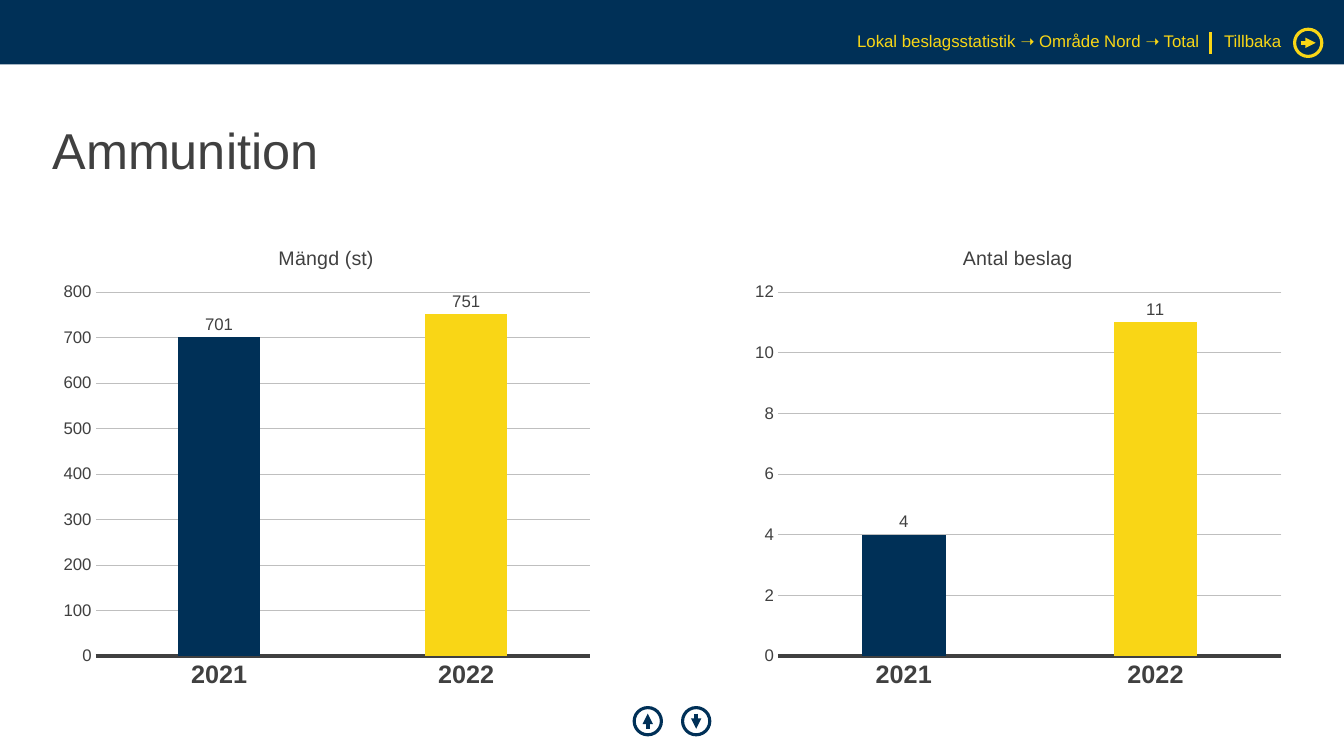
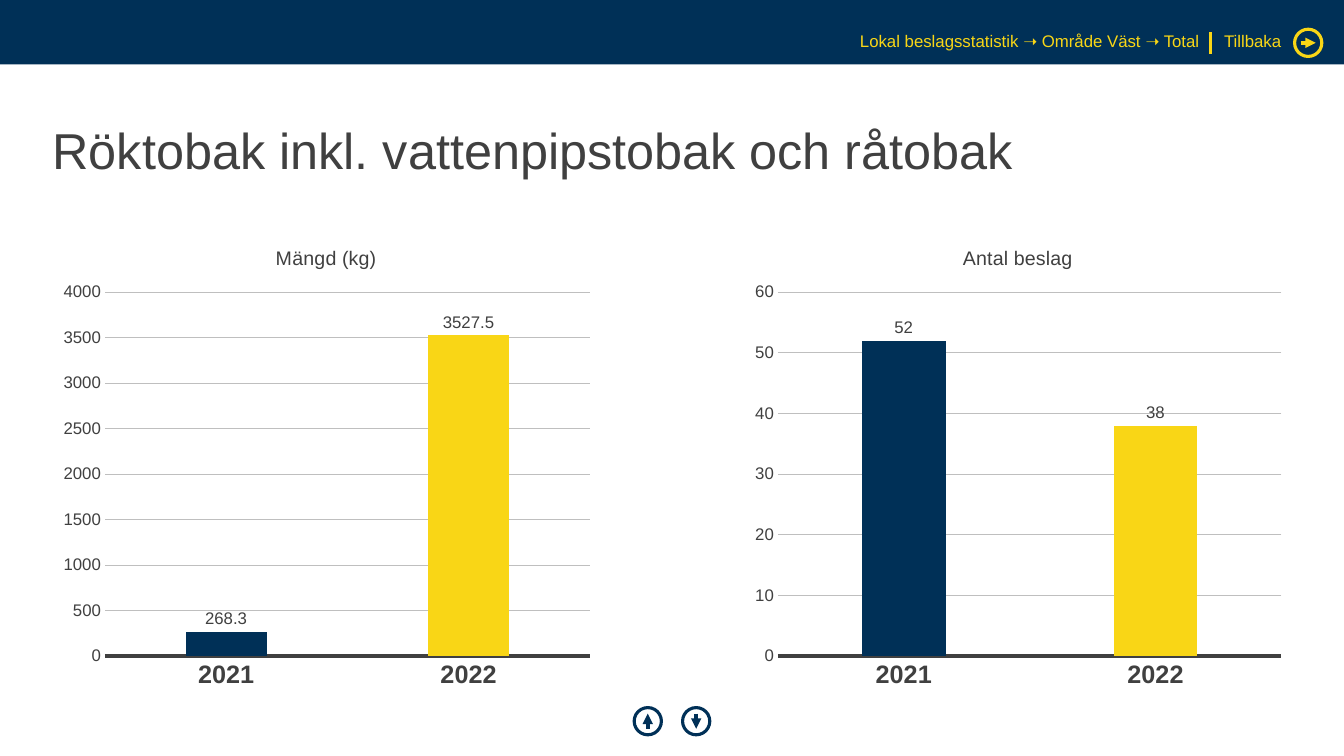
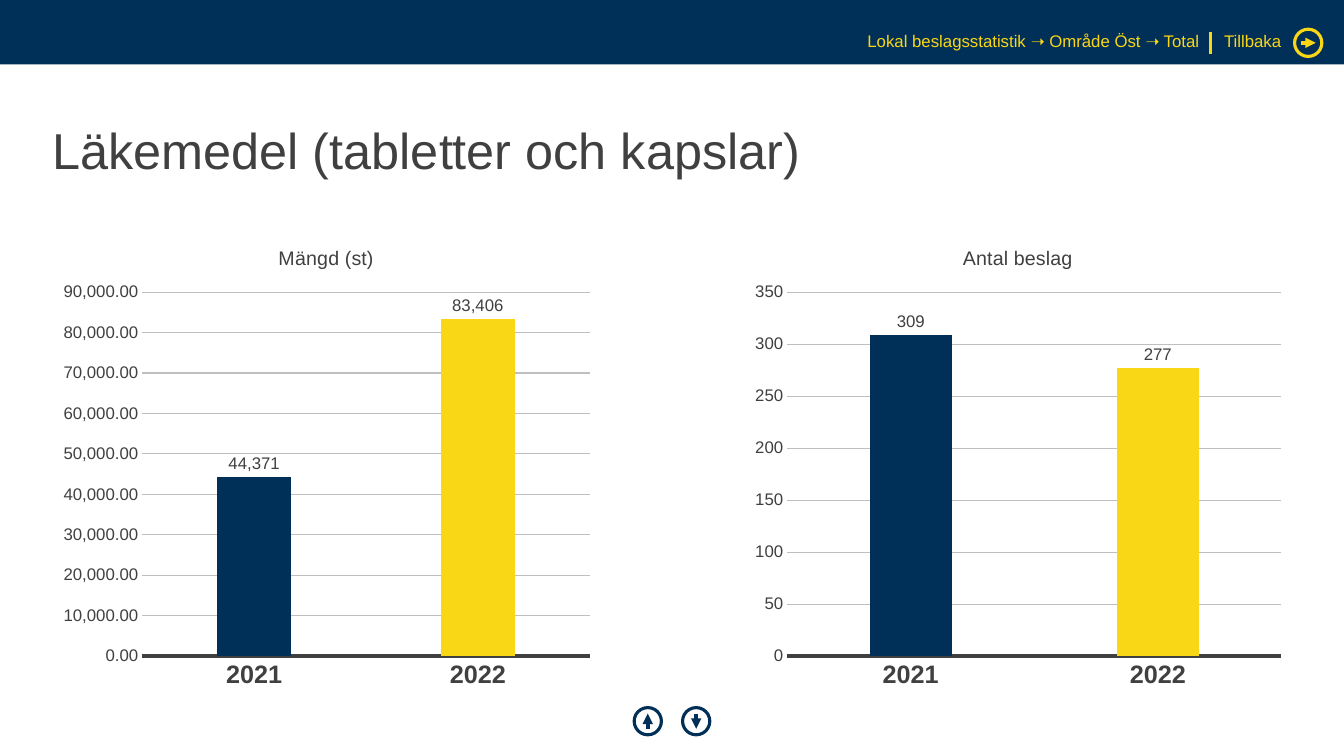
from lxml.etree import SubElement
from pptx import Presentation
from pptx.chart.data import CategoryChartData
from pptx.dml.color import RGBColor
from pptx.enum.chart import XL_CHART_TYPE, XL_LABEL_POSITION, XL_TICK_MARK
from pptx.enum.shapes import MSO_CONNECTOR, MSO_SHAPE
from pptx.enum.text import MSO_ANCHOR, PP_ALIGN
from pptx.oxml import parse_xml
from pptx.oxml.ns import nsdecls, qn
from pptx.util import Inches, Pt

COLORS = {
    "navy": "003057",
    "yellow": "F9D616",
    "text": "404040",
    "grid": "BFBFBF",
}
FONT = "Arial"
SLIDE_WIDTH, SLIDE_HEIGHT = 13.33, 7.5
MARGIN = 0.52
BAND_HEIGHT = 0.64
BUTTON_SIZE = 0.27
ARROW_LENGTH = 0.15
CHART_TOP, CHART_WIDTH, CHART_HEIGHT = 2.25, 5.43, 4.65
CHART_LEFTS = (MARGIN, 7.38)
# Plot area with its axis labels, in inches from the chart's corner
PLOT_LEFT, PLOT_TOP, PLOT_WIDTH, PLOT_HEIGHT = 0.11, 0.56, 5.22, 4.02
YEARS = ("2021", "2022")
YEAR_COLORS = ("navy", "yellow")

SLIDES = [
    {
        "area": "Område Nord",
        "title": "Ammunition",
        "charts": [
            {"title": "Mängd (st)", "values": (701, 751), "top": 800, "step": 100},
            {"title": "Antal beslag", "values": (4, 11), "top": 12, "step": 2},
        ],
    },
    {
        "area": "Område Väst",
        "title": "Röktobak inkl. vattenpipstobak och råtobak",
        "charts": [
            {"title": "Mängd (kg)", "values": (268.3, 3527.5), "top": 4000, "step": 500,
             "label_format": "0.0"},
            {"title": "Antal beslag", "values": (52, 38), "top": 60, "step": 10},
        ],
    },
    {
        "area": "Område Öst",
        "title": "Läkemedel (tabletter och kapslar)",
        "charts": [
            {"title": "Mängd (st)", "values": (44371, 83406), "top": 90000, "step": 10000,
             "label_format": "#,##0", "axis_format": "#,##0.00"},
            {"title": "Antal beslag", "values": (309, 277), "top": 350, "step": 50},
        ],
    },
]


def rgb(name):
    return RGBColor.from_string(COLORS[name])


def style_font(font, size, color="text", bold=False):
    font.name = FONT
    font.size = Pt(size)
    font.bold = bold
    font.color.rgb = rgb(color)


def style_line(line, color, width):
    line.color.rgb = rgb(color)
    line.width = Pt(width)


def add_text(slide, box, text, size, color, align=PP_ALIGN.LEFT, anchor=MSO_ANCHOR.TOP):
    frame = slide.shapes.add_textbox(*map(Inches, box)).text_frame
    frame.word_wrap = True
    frame.vertical_anchor = anchor
    frame.margin_left = frame.margin_right = frame.margin_top = frame.margin_bottom = 0
    frame.text = text
    paragraph = frame.paragraphs[0]
    paragraph.alignment = align
    paragraph.line_spacing = 0.9
    style_font(paragraph.runs[0].font, size, color)


def add_line(slide, start, end, color, width, arrow=False):
    connector = slide.shapes.add_connector(
        MSO_CONNECTOR.STRAIGHT, *map(Inches, (*start, *end)))
    style_line(connector.line, color, width)
    if arrow:
        SubElement(connector.line._get_or_add_ln(), qn("a:tailEnd"), type="triangle")
    SubElement(connector._element.spPr, qn("a:effectLst"))


def add_nav_button(slide, left, top, direction, color):
    """Draw a ringed arrow; direction is an (x, y) unit step."""
    center_x, center_y = left + BUTTON_SIZE / 2, top + BUTTON_SIZE / 2
    reach_x, reach_y = (step * ARROW_LENGTH / 2 for step in direction)
    add_line(slide, (center_x - reach_x, center_y - reach_y),
             (center_x + reach_x, center_y + reach_y), color, 2.5, arrow=True)
    ring = slide.shapes.add_shape(
        MSO_SHAPE.OVAL, *map(Inches, (left, top, BUTTON_SIZE, BUTTON_SIZE)))
    ring.shadow.inherit = False
    ring.fill.background()
    style_line(ring.line, color, 2.25)


def add_header(slide, area):
    band = slide.shapes.add_shape(
        MSO_SHAPE.RECTANGLE, 0, 0, Inches(SLIDE_WIDTH), Inches(BAND_HEIGHT))
    band.shadow.inherit = False
    band.fill.solid()
    band.fill.fore_color.rgb = rgb("navy")
    band.line.fill.background()
    add_text(slide, (5.5, 0.33, 6.4, 0.19), f"Lokal beslagsstatistik ➝ {area} ➝ Total",
             12, "yellow", align=PP_ALIGN.RIGHT)
    add_line(slide, (12.01, 0.32), (12.01, 0.54), "yellow", 2.25)
    add_text(slide, (12.14, 0.33, 0.97, 0.19), "Tillbaka", 12, "yellow")
    add_nav_button(slide, 12.84, 0.29, (1, 0), "yellow")


def add_footer(slide):
    add_nav_button(slide, 6.29, 7.02, (0, -1), "navy")
    add_nav_button(slide, 6.77, 7.02, (0, 1), "navy")


def place_plot(chart):
    """Fix the plot area, axis labels included, so a gap stays under the title."""
    plot_area = chart._chartSpace.chart.plotArea
    for layout in plot_area.findall(qn("c:layout")):
        plot_area.remove(layout)
    fractions = {
        "x": PLOT_LEFT / CHART_WIDTH,
        "y": PLOT_TOP / CHART_HEIGHT,
        "w": PLOT_WIDTH / CHART_WIDTH,
        "h": PLOT_HEIGHT / CHART_HEIGHT,
    }
    modes = "".join(f'<c:{side}Mode val="edge"/>' for side in "xy")
    sizes = "".join(f'<c:{key} val="{value:.4f}"/>' for key, value in fractions.items())
    plot_area.insert(0, parse_xml(
        f'<c:layout {nsdecls("c")}><c:manualLayout><c:layoutTarget val="outer"/>'
        f"{modes}{sizes}</c:manualLayout></c:layout>"))


def style_axes(chart, top, step, number_format):
    years = chart.category_axis
    years.major_tick_mark = XL_TICK_MARK.NONE
    style_font(years.tick_labels.font, 18, bold=True)
    style_line(years.format.line, "text", 2.25)

    scale = chart.value_axis
    scale.minimum_scale, scale.maximum_scale, scale.major_unit = 0, top, step
    scale.major_tick_mark = XL_TICK_MARK.NONE
    scale.format.line.fill.background()
    style_line(scale.major_gridlines.format.line, "grid", 0.75)
    scale.tick_labels.number_format = number_format
    scale.tick_labels.number_format_is_linked = False
    style_font(scale.tick_labels.font, 12)


def style_bars(plot, number_format):
    plot.gap_width = 200
    plot.overlap = -27
    plot.vary_by_categories = False
    bars = plot.series[0]
    bars.invert_if_negative = False
    for index, color in enumerate(YEAR_COLORS):
        fill = bars.points[index].format.fill
        fill.solid()
        fill.fore_color.rgb = rgb(color)
    labels = bars.data_labels
    labels.show_value = True
    labels.position = XL_LABEL_POSITION.OUTSIDE_END
    labels.number_format = number_format
    labels.number_format_is_linked = False
    style_font(labels.font, 12)


def add_year_chart(slide, box, title, values, top, step,
                   label_format="General", axis_format="General"):
    data = CategoryChartData()
    data.categories = YEARS
    data.add_series("Series 1", values)
    chart = slide.shapes.add_chart(
        XL_CHART_TYPE.COLUMN_CLUSTERED, *map(Inches, box), data).chart
    style_font(chart.font, 10)
    chart.has_legend = False
    chart.has_title = True
    chart.chart_title.include_in_layout = False
    heading = chart.chart_title.text_frame
    heading.text = title
    style_font(heading.paragraphs[0].runs[0].font, 14)
    style_axes(chart, top, step, axis_format)
    style_bars(chart.plots[0], label_format)
    place_plot(chart)


def add_statistics_slide(presentation, area, title, charts):
    slide = presentation.slides.add_slide(presentation.slide_layouts[6])
    add_header(slide, area)
    add_text(slide, (MARGIN, 0.79, 12.28, 1.45), title, 36, "text",
             anchor=MSO_ANCHOR.MIDDLE)
    for left, chart in zip(CHART_LEFTS, charts):
        add_year_chart(slide, (left, CHART_TOP, CHART_WIDTH, CHART_HEIGHT), **chart)
    add_footer(slide)


def main():
    presentation = Presentation()
    presentation.slide_width = Inches(SLIDE_WIDTH)
    presentation.slide_height = Inches(SLIDE_HEIGHT)
    for content in SLIDES:
        add_statistics_slide(presentation, **content)
    presentation.save("out.pptx")


if __name__ == "__main__":
    main()
